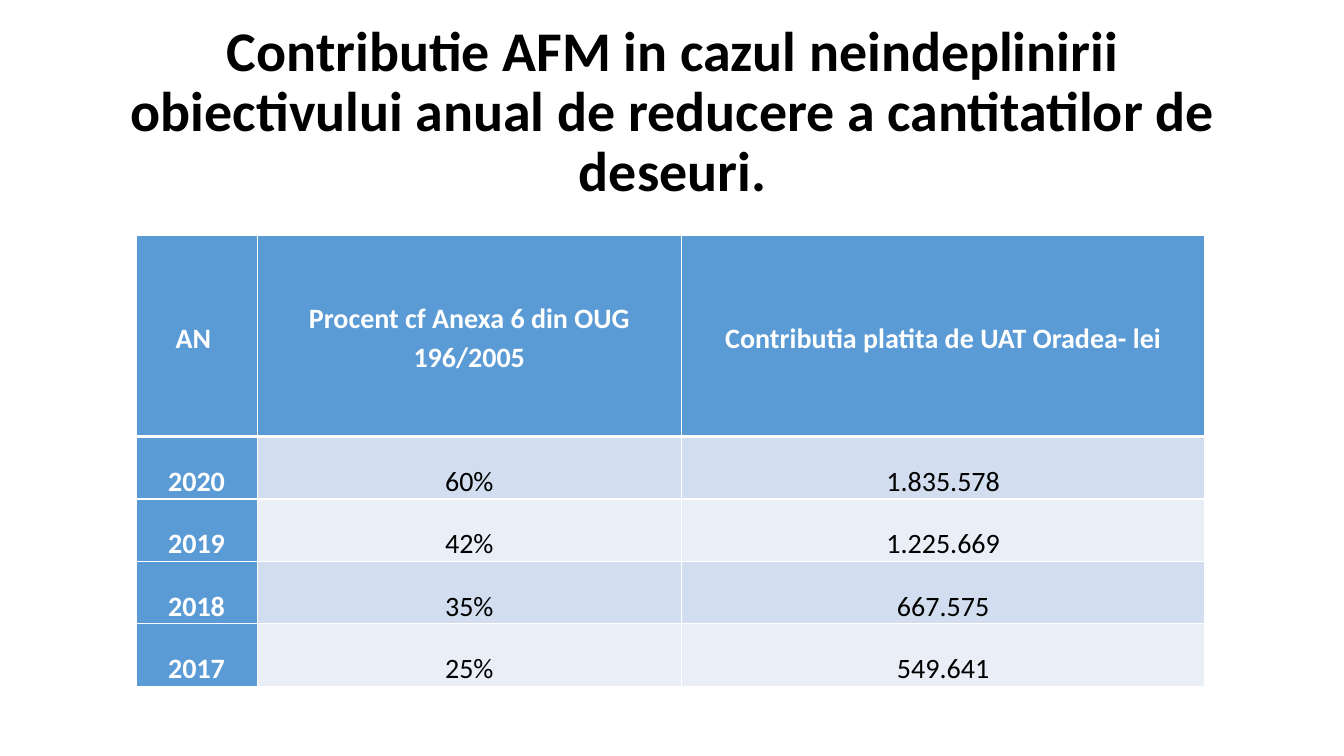
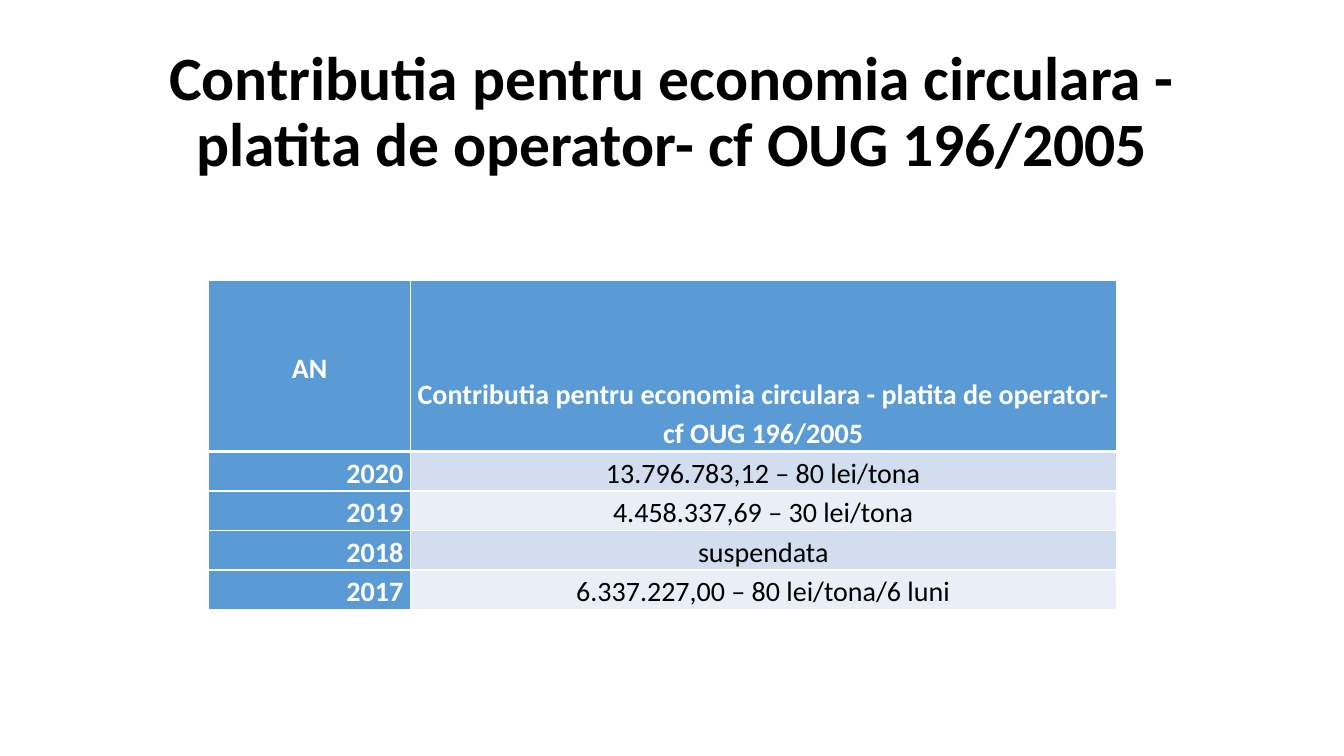
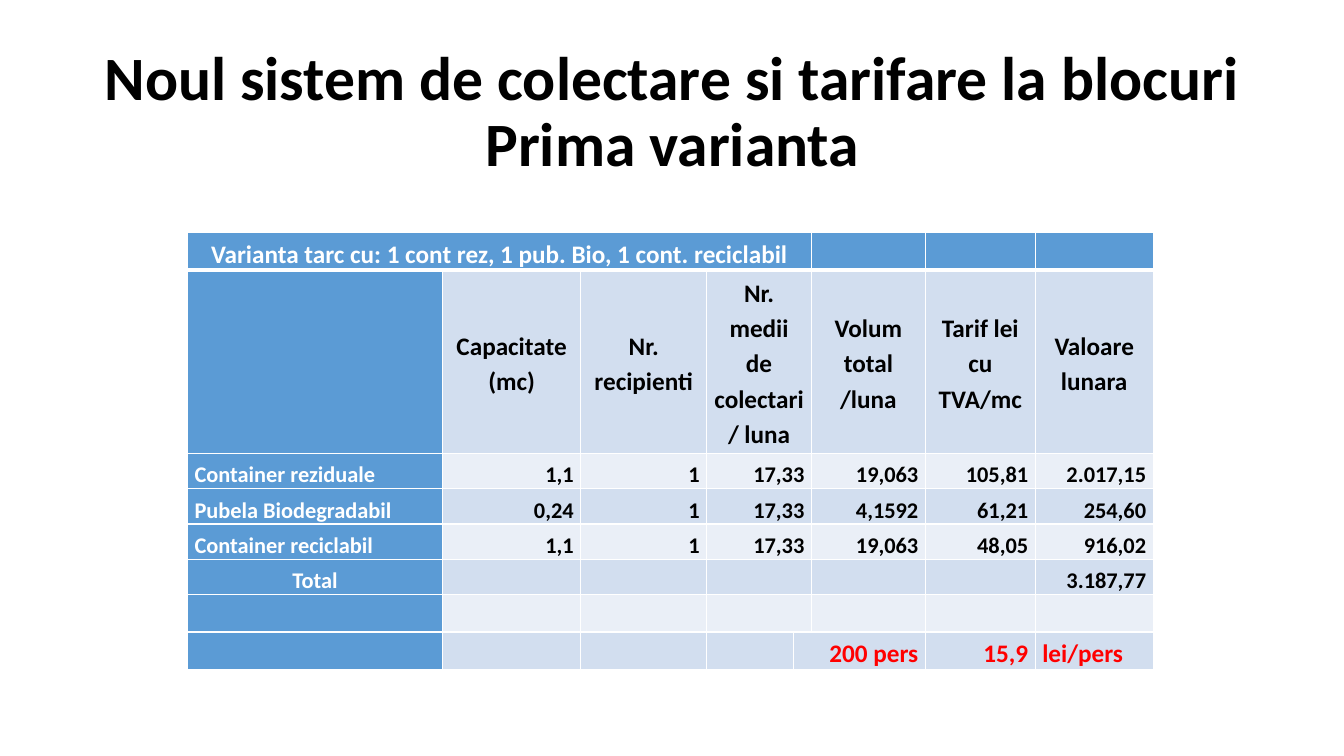
from dataclasses import dataclass
from typing import Optional

from lxml import etree
from pptx import Presentation
from pptx.dml.color import RGBColor
from pptx.enum.text import MSO_ANCHOR, MSO_AUTO_SIZE, PP_ALIGN
from pptx.oxml.ns import qn
from pptx.util import Inches, Pt

LEFT, CENTER, RIGHT = PP_ALIGN.LEFT, PP_ALIGN.CENTER, PP_ALIGN.RIGHT
MIDDLE, BOTTOM = MSO_ANCHOR.MIDDLE, MSO_ANCHOR.BOTTOM
NO_AUTOFIT = MSO_AUTO_SIZE.NONE

WHITE = RGBColor(0xFF, 0xFF, 0xFF)
BLACK = RGBColor(0x00, 0x00, 0x00)
RED = RGBColor(0xFF, 0x00, 0x00)
HEADER_BLUE = RGBColor(0x5B, 0x9B, 0xD5)
BANDS = (RGBColor(0xEA, 0xEF, 0xF7), RGBColor(0xD2, 0xDE, 0xEF))

FONT = "Calibri"
TITLE_ONLY_LAYOUT = 5
THIN_BORDER, HEADER_BORDER = 1, 3


@dataclass(frozen=True)
class Entry:
    text: str = ""
    alignment: PP_ALIGN = CENTER
    anchor: MSO_ANCHOR = BOTTOM
    size: int = 20
    color: Optional[RGBColor] = None


@dataclass(frozen=True)
class Span:
    row: int
    first_column: int
    last_column: int


@dataclass(frozen=True)
class TableSlide:
    title: str
    title_size: int
    left: float
    top: float
    column_widths: list[float]
    row_heights: list[float]
    rows: list[list[Entry]]
    body_bold: bool = False
    spans: tuple[Span, ...] = ()


def write_text(text_frame, text: str, *, size: int, color: RGBColor, bold: bool,
               alignment: PP_ALIGN, line_spacing: float) -> None:
    paragraph = text_frame.paragraphs[0]
    paragraph.text = text
    paragraph.alignment = alignment
    paragraph.line_spacing = line_spacing
    for run in paragraph.runs:
        run.font.name = FONT
        run.font.size = Pt(size)
        run.font.bold = bold
        run.font.color.rgb = color


def add_title(slide, text: str, size: int) -> None:
    title = slide.shapes.title
    title.left, title.top = Inches(0.92), Inches(0.4)
    title.width, title.height = Inches(11.5), Inches(1.45)
    title.text_frame.word_wrap = True
    title.text_frame.auto_size = NO_AUTOFIT
    title.text_frame.vertical_anchor = MIDDLE
    write_text(title.text_frame, text, size=size, color=BLACK, bold=True,
               alignment=CENTER, line_spacing=0.9)


def add_borders(cell, top: int, bottom: int) -> None:
    properties = cell._tc.get_or_add_tcPr()
    widths = {"a:lnL": THIN_BORDER, "a:lnR": THIN_BORDER, "a:lnT": top, "a:lnB": bottom}
    for tag, width in widths.items():
        line = etree.SubElement(properties, qn(tag), w=str(Pt(width)))
        fill = etree.SubElement(line, qn("a:solidFill"))
        etree.SubElement(fill, qn("a:srgbClr"), val=str(WHITE))


def format_cell(cell, entry: Entry, row: int, column: int, body_bold: bool) -> None:
    heading = row == 0 or column == 0
    add_borders(cell,
                top=HEADER_BORDER if row == 1 else THIN_BORDER,
                bottom=HEADER_BORDER if row == 0 else THIN_BORDER)
    cell.fill.solid()
    cell.fill.fore_color.rgb = HEADER_BLUE if heading else BANDS[row % 2]
    cell.margin_left = cell.margin_right = Inches(0.07)
    cell.margin_top = cell.margin_bottom = 0
    cell.vertical_anchor = entry.anchor
    if entry.text:
        write_text(cell.text_frame, entry.text, size=entry.size,
                   color=entry.color or (WHITE if heading else BLACK),
                   bold=heading or body_bold,
                   alignment=entry.alignment, line_spacing=1.15)


def add_table(slide, content: TableSlide) -> None:
    table = slide.shapes.add_table(
        len(content.row_heights), len(content.column_widths),
        Inches(content.left), Inches(content.top),
        Inches(sum(content.column_widths)), Inches(sum(content.row_heights))).table
    table.first_row = table.horz_banding = False
    for column, width in zip(table.columns, content.column_widths):
        column.width = Inches(width)
    for row, height in zip(table.rows, content.row_heights):
        row.height = Inches(height)
    for row, entries in enumerate(content.rows):
        for column, entry in enumerate(entries):
            format_cell(table.cell(row, column), entry, row, column, content.body_bold)
    for span in content.spans:
        table.cell(span.row, span.first_column).merge(table.cell(span.row, span.last_column))


def contribution_rows() -> list[list[Entry]]:
    values = [("2020", "60%", "1.835.578"), ("2019", "42%", "1.225.669"),
              ("2018", "35%", "667.575"), ("2017", "25%", "549.641")]
    header = ("AN ", "Procent cf Anexa 6 din OUG 196/2005",
              "Contributia platita de UAT Oradea- lei")
    return [[Entry(text, anchor=MIDDLE) for text in header],
            *([Entry(text) for text in row] for row in values)]


def circular_economy_rows() -> list[list[Entry]]:
    values = [("2020", "13.796.783,12 – 80 lei/tona"), ("2019", "4.458.337,69 – 30 lei/tona"),
              ("2018", "suspendata"), ("2017", "6.337.227,00 – 80 lei/tona/6 luni")]
    return [[Entry("AN", anchor=MIDDLE), Entry(CIRCULAR_TITLE)],
            *([Entry(year, RIGHT), Entry(amount, anchor=MIDDLE)] for year, amount in values)]


def tariff_rows() -> list[list[Entry]]:
    empty = Entry()
    columns = ("", "Capacitate (mc)", "Nr. recipienti", "Nr. medii de colectari/ luna", "",
               "Volum total /luna", "Tarif lei cu TVA/mc", "Valoare lunara")
    containers = [
        ("Container reziduale", "1,1", "1", "17,33", "", "19,063", "105,81", "2.017,15"),
        ("Pubela Biodegradabil", "0,24", "1", "17,33", "", "4,1592", "61,21", "254,60"),
        ("Container reciclabil", "1,1", "1", "17,33", "", "19,063", "48,05", "916,02"),
    ]
    heading = Entry("Varianta tarc cu: 1 cont rez, 1 pub. Bio, 1 cont. reciclabil", size=18)
    return [
        [heading] + [empty] * 7,
        [Entry(text, anchor=MIDDLE, size=18) for text in columns],
        *([Entry(name, LEFT, size=16)] + [Entry(text, RIGHT, size=16) for text in numbers]
          for name, *numbers in containers),
        [Entry("Total", size=16)] + [empty] * 6 + [Entry("3.187,77", RIGHT, size=16)],
        [empty] * 8,
        [empty] * 4 + [Entry("200 pers", RIGHT, size=18, color=RED), empty,
                       Entry("15,9", RIGHT, size=18, color=RED),
                       Entry("lei/pers", LEFT, size=18, color=RED)],
    ]


CIRCULAR_TITLE = "Contributia pentru economia circulara - platita de operator- cf OUG 196/2005"

SLIDES = [
    TableSlide(
        title="Contributie AFM in cazul neindeplinirii obiectivului anual de reducere "
              "a cantitatilor de deseuri.",
        title_size=40, left=1.35, top=2.34,
        column_widths=[1.2, 4.21, 5.19], row_heights=[1.99] + [0.62] * 4,
        rows=contribution_rows()),
    TableSlide(
        title=CIRCULAR_TITLE, title_size=44, left=2.07, top=2.78,
        column_widths=[2, 7], row_heights=[1.7] + [0.38] * 4,
        rows=circular_economy_rows()),
    TableSlide(
        title="Noul sistem de colectare si tarifare la blocuri\nPrima varianta",
        title_size=44, left=1.86, top=2.31,
        column_widths=[2.53, 1.37, 1.25, 0.86, 0.17, 1.13, 1.09, 1.17],
        row_heights=[0.37, 1.82] + [0.35] * 4 + [0.37] * 2,
        rows=tariff_rows(), body_bold=True,
        spans=(Span(0, 0, 4), *(Span(row, 3, 4) for row in range(1, 7)), Span(7, 4, 5))),
]


def main() -> None:
    presentation = Presentation()
    presentation.slide_width, presentation.slide_height = Inches(13.33), Inches(7.5)
    for content in SLIDES:
        slide = presentation.slides.add_slide(presentation.slide_layouts[TITLE_ONLY_LAYOUT])
        add_title(slide, content.title, content.title_size)
        add_table(slide, content)
    presentation.save("out.pptx")


if __name__ == "__main__":
    main()
